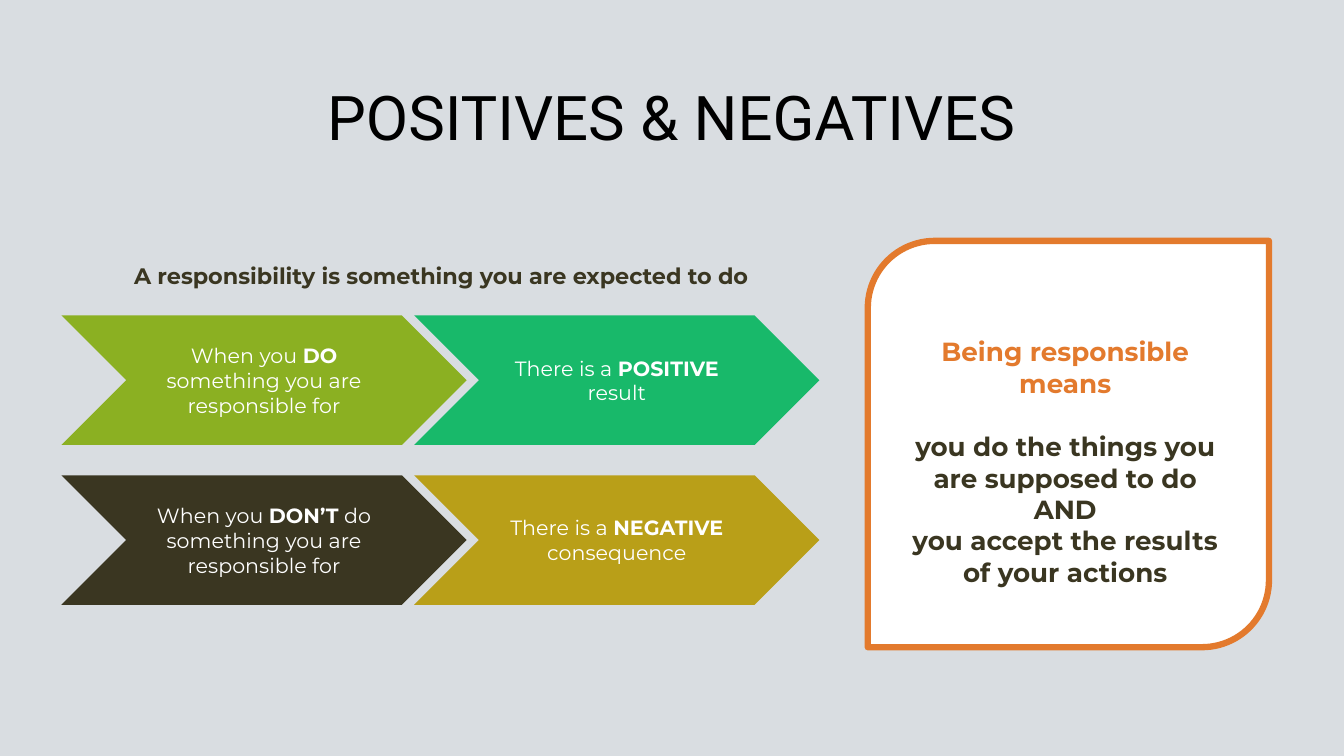
from pptx import Presentation
from pptx.dml.color import RGBColor
from pptx.enum.shapes import MSO_SHAPE
from pptx.enum.text import MSO_ANCHOR, PP_ALIGN
from pptx.util import Cm, Pt

# Content: each chevron has a colour and (text, bold) runs; \v breaks a line
TITLE = "POSITIVES & NEGATIVES"
DEFINITION = "A responsibility is something you are expected to do"
CHEVRON_ROWS = [
    [
        ("lime", [("When you ", False), ("DO\v", True),
                  ("something you are responsible for", False)]),
        ("green", [("There is a ", False), ("POSITIVE ", True), ("result", False)]),
    ],
    [
        ("dark", [("When you ", False), ("DON’T", True),
                  (" do something you are responsible for", False)]),
        ("gold", [("There is a ", False), ("NEGATIVE ", True), ("consequence", False)]),
    ],
]
# Panel paragraphs: text, colour, space before in points
PANEL_LINES = [
    ("Being responsible means", "orange", 0),
    ("you do the things you are supposed to do", "dark", 22.8),
    ("AND", "dark", 0),
    ("you accept the results of your actions", "dark", 0),
]
COLORS = {
    "background": "D9DDE1", "black": "000000", "white": "FFFFFF",
    "dark": "3A3621", "lime": "8BB022", "green": "18B96A",
    "gold": "B99F18", "orange": "E37A2D",
}

# Chevron grid
GRID_LEFT, GRID_TOP = 1.55, 7.95
COLUMN_STEP, ROW_STEP = 8.89, 4.03
CHEVRON_WIDTH, CHEVRON_HEIGHT = 10.21, 3.26


def color(name):
    return RGBColor.from_string(COLORS[name])


def set_font(font, name, size, color_name, bold=None):
    font.name = name
    font.size = Pt(size)
    font.color.rgb = color(color_name)
    font.bold = bold


def set_frame(shape, vertical_margin=0.18):
    frame = shape.text_frame
    frame.word_wrap = True
    frame.margin_left = frame.margin_right = Cm(0.33)
    frame.margin_top = frame.margin_bottom = Cm(vertical_margin)
    return frame


def add_text_box(left, top, width, height, vertical_margin=0.18):
    box = slide.shapes.add_textbox(Cm(left), Cm(top), Cm(width), Cm(height))
    return set_frame(box, vertical_margin)


def add_filled_shape(kind, left, top, width, height, fill):
    shape = slide.shapes.add_shape(kind, Cm(left), Cm(top), Cm(width), Cm(height))
    shape.shadow.inherit = False
    shape.fill.solid()
    shape.fill.fore_color.rgb = color(fill)
    shape.line.fill.background()
    return shape


presentation = Presentation()
presentation.slide_width, presentation.slide_height = Cm(33.87), Cm(19.05)
slide = presentation.slides.add_slide(presentation.slide_layouts[6])
slide.background.fill.solid()
slide.background.fill.fore_color.rgb = color("background")

# Title
paragraph = add_text_box(1.15, 1.65, 31.55, 2.13, 0.33).paragraphs[0]
paragraph.text = TITLE
paragraph.alignment = PP_ALIGN.CENTER
set_font(paragraph.font, "Roboto", 44, "black")

# Definition
paragraph = add_text_box(3.05, 6.43, 16.94, 1.02).paragraphs[0]
paragraph.text = DEFINITION
set_font(paragraph.font, "Montserrat", 16, "dark", True)

# Chevrons
for row, chevrons in enumerate(CHEVRON_ROWS):
    for column, (fill, runs) in enumerate(chevrons):
        chevron = add_filled_shape(
            MSO_SHAPE.CHEVRON, GRID_LEFT + column * COLUMN_STEP,
            GRID_TOP + row * ROW_STEP, CHEVRON_WIDTH, CHEVRON_HEIGHT, fill)
        frame = set_frame(chevron)
        frame.vertical_anchor = MSO_ANCHOR.MIDDLE
        paragraph = frame.paragraphs[0]
        paragraph.alignment = PP_ALIGN.CENTER
        set_font(paragraph.font, "Montserrat", 14.7, "white")
        for text, bold in runs:
            run = paragraph.add_run()
            run.text = text.rstrip("\v")
            run.font.bold = bold
            if text.endswith("\v"):
                paragraph.add_line_break()

# Panel
panel = add_filled_shape(
    MSO_SHAPE.ROUND_2_DIAG_RECTANGLE, 21.87, 6.07, 10.11, 10.24, "white")
panel.adjustments[0] = 0.167
panel.adjustments[1] = 0
panel.line.color.rgb = color("orange")
panel.line.width = Pt(4.5)

frame = add_text_box(22.58, 8.28, 8.53, 6.73)
for index, (text, color_name, space_before) in enumerate(PANEL_LINES):
    paragraph = frame.add_paragraph() if index else frame.paragraphs[0]
    paragraph.text = text
    paragraph.alignment = PP_ALIGN.CENTER
    if space_before:
        paragraph.space_before = Pt(space_before)
    set_font(paragraph.font, "Montserrat", 18.7, color_name, True)

presentation.save("out.pptx")
